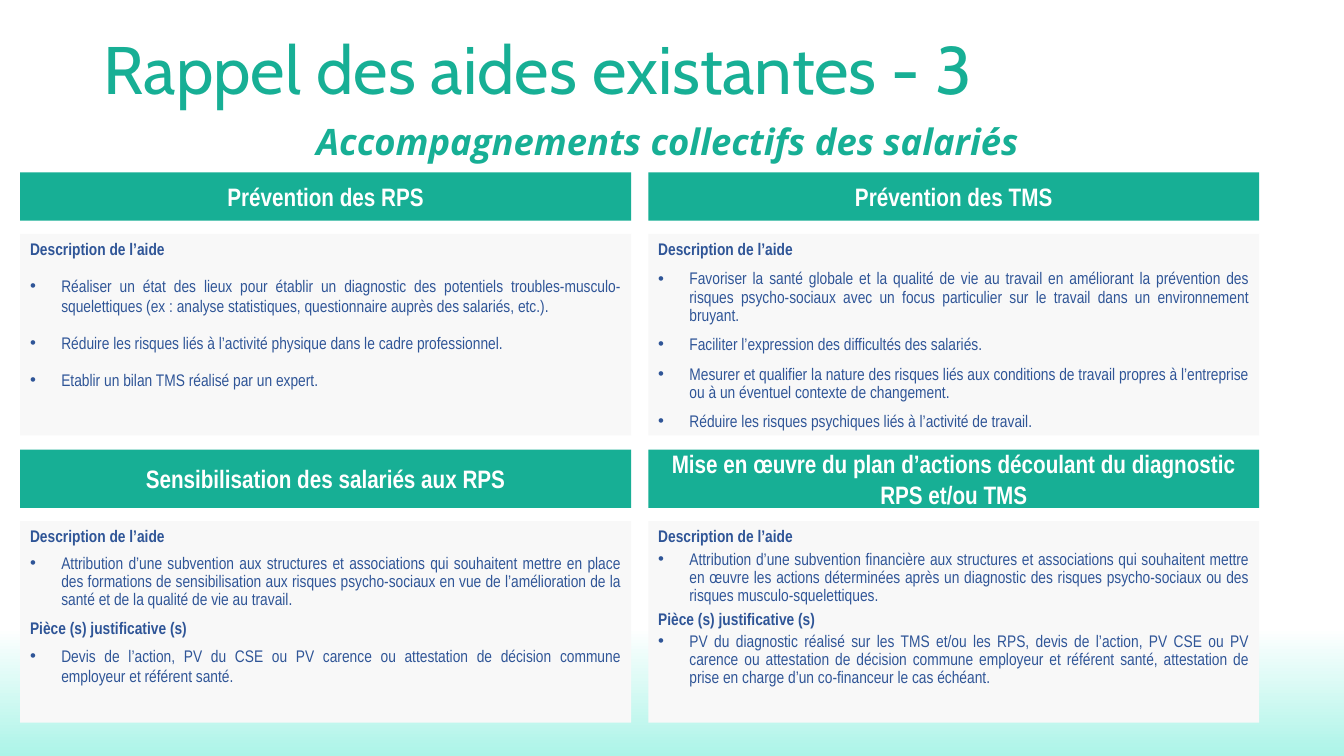
from lxml import etree
from pptx import Presentation
from pptx.dml.color import RGBColor
from pptx.enum.shapes import MSO_SHAPE
from pptx.enum.text import MSO_ANCHOR, PP_ALIGN
from pptx.oxml.ns import qn
from pptx.util import Inches, Pt

RECTANGLE = MSO_SHAPE.RECTANGLE
TOP, MIDDLE = MSO_ANCHOR.TOP, MSO_ANCHOR.MIDDLE
LEFT, CENTER, JUSTIFY = PP_ALIGN.LEFT, PP_ALIGN.CENTER, PP_ALIGN.JUSTIFY

COLUMN_LEFT, COLUMN_STEP, CARD_WIDTH = 0.2, 6.23, 6.06
GAP, BODY_HEIGHT = 0.13, 2
DESCRIPTION = "Description de l’aide"
DOCUMENTS = "Pièce (s) justificative (s)"


def color(value):
    return RGBColor.from_string(value)


def add_bullet(paragraph):
    properties = paragraph._p.get_or_add_pPr()
    properties.set("marL", str(Inches(0.31)))
    properties.set("indent", str(-Inches(0.31)))
    etree.SubElement(properties, qn("a:buFont")).set("typeface", "Arial")
    etree.SubElement(properties, qn("a:buChar")).set("char", "•")


def write(paragraph, text, *, font, size, ink, bold=False, italic=False,
          align=LEFT, line=None, before=0, after=0, bullet=False):
    if bullet:
        add_bullet(paragraph)
    paragraph.alignment = align
    paragraph.space_before = Pt(before)
    paragraph.space_after = Pt(after)
    if line:
        paragraph.line_spacing = line
    run = paragraph.add_run()
    run.text = text
    run.font.name = font
    run.font.size = Pt(size)
    run.font.bold = bold
    run.font.italic = italic
    run.font.color.rgb = color(ink)


class AidSlide:
    GREEN, BLUE, WHITE = "17AF95", "2F5597", "FFFFFF"
    PANEL, MINT = "F8F8F8", "ACF4E8"
    CARD_FONT = "Arial Narrow"

    def __init__(self, presentation):
        self.slide = presentation.slides.add_slide(presentation.slide_layouts[6])

    def background(self):
        fill = self.slide.background.fill
        fill.gradient()
        fill.gradient_angle = 270
        stops = zip(fill.gradient_stops, (0.83, 1), (self.WHITE, self.MINT))
        for stop, position, shade in stops:
            stop.position = position
            stop.color.rgb = color(shade)

    def heading(self, text, left, top, width, height, anchor=TOP, inset=0.1, **style):
        box = self.slide.shapes.add_textbox(
            Inches(left), Inches(top), Inches(width), Inches(height))
        frame = box.text_frame
        frame.word_wrap = True
        frame.vertical_anchor = anchor
        frame.margin_left = Inches(inset)
        write(frame.paragraphs[0], text, ink=self.GREEN, **style)

    def rectangle(self, left, top, height, fill, anchor):
        shape = self.slide.shapes.add_shape(
            RECTANGLE, Inches(left), Inches(top), Inches(CARD_WIDTH), Inches(height))
        shape.shadow.inherit = False
        shape.fill.solid()
        shape.fill.fore_color.rgb = color(fill)
        shape.line.fill.background()
        frame = shape.text_frame
        frame.word_wrap = True
        frame.vertical_anchor = anchor
        return frame

    def card(self, title, left, top, title_height, items, label_gap, item_gap):
        body = self.rectangle(
            left, top + title_height + GAP, BODY_HEIGHT, self.PANEL, TOP)
        for index, (text, line) in enumerate([(DESCRIPTION, None)] + items):
            label = text in (DESCRIPTION, DOCUMENTS)
            gap = label_gap if label else item_gap
            paragraph = body.add_paragraph() if index else body.paragraphs[0]
            write(paragraph, text, font=self.CARD_FONT, size=12, ink=self.BLUE,
                  bold=label, align=JUSTIFY, line=Pt(line) if line else None,
                  before=gap if index else 0, after=gap, bullet=not label)
        banner = self.rectangle(left, top, title_height, self.GREEN, MIDDLE)
        write(banner.paragraphs[0], title, font=self.CARD_FONT, size=18,
              ink=self.WHITE, bold=True, align=CENTER)


CARD_ROWS = [
    (1.71, 0.48, [
        ("Prévention des RPS", 6, 6, [
            ("Réaliser un état des lieux pour établir un diagnostic des potentiels "
             "troubles-musculo-squelettiques (ex : analyse statistiques, "
             "questionnaire auprès des salariés, etc.).", None),
            ("Réduire les risques liés à l’activité physique dans le cadre "
             "professionnel.", None),
            ("Etablir un bilan TMS réalisé par un expert.", None),
        ]),
        ("Prévention des TMS", 4, 4, [
            ("Favoriser la santé globale et la qualité de vie au travail en "
             "améliorant la prévention des risques psycho-sociaux avec un focus "
             "particulier sur le travail dans un environnement bruyant.", 13),
            ("Faciliter l’expression des difficultés des salariés.", 13),
            ("Mesurer et qualifier la nature des risques liés aux conditions de "
             "travail propres à l’entreprise ou à un éventuel contexte de "
             "changement.", 13),
            ("Réduire les risques psychiques liés à l’activité de travail.", 13),
        ]),
    ]),
    (4.46, 0.58, [
        ("Sensibilisation des salariés aux RPS", 3, 3, [
            ("Attribution d’une subvention aux structures et associations qui "
             "souhaitent mettre en place des formations de sensibilisation aux "
             "risques psycho-sociaux en vue de l’amélioration de la santé et de la "
             "qualité de vie au travail.", 12.9),
            (DOCUMENTS, None),
            ("Devis de l’action, PV du CSE ou PV carence ou attestation de décision "
             "commune employeur et référent santé.", None),
        ]),
        ("Mise en œuvre du plan d’actions découlant du diagnostic RPS et/ou TMS", 0, 3, [
            ("Attribution d’une subvention financière aux structures et "
             "associations qui souhaitent mettre en œuvre les actions déterminées "
             "après un diagnostic des risques psycho-sociaux ou des risques "
             "musculo-squelettiques.", 12.9),
            (DOCUMENTS, None),
            ("PV du diagnostic réalisé sur les TMS et/ou les RPS, devis de "
             "l’action, PV CSE ou PV carence ou attestation de décision commune "
             "employeur et référent santé, attestation de prise en charge d’un "
             "co-financeur le cas échéant.", 12.9),
        ]),
    ]),
]


def main():
    presentation = Presentation()
    presentation.slide_width = Inches(13.33)
    presentation.slide_height = Inches(7.5)
    page = AidSlide(presentation)
    page.background()
    page.heading("Rappel des aides existantes - 3", 0.93, 0.06, 11.5, 1.32,
                 anchor=MIDDLE, font="Cabin", size=48, line=0.9)
    page.heading("Accompagnements collectifs des salariés", 0.45, 1.1, 12.45, 0.58,
                 inset=0, font="Open Sans", size=26, bold=True, italic=True,
                 align=CENTER, line=1.07, after=6)
    for top, title_height, cards in CARD_ROWS:
        for column, (title, label_gap, item_gap, items) in enumerate(cards):
            left = COLUMN_LEFT + column * COLUMN_STEP
            page.card(title, left, top, title_height, items, label_gap, item_gap)
    presentation.save("out.pptx")


if __name__ == "__main__":
    main()
